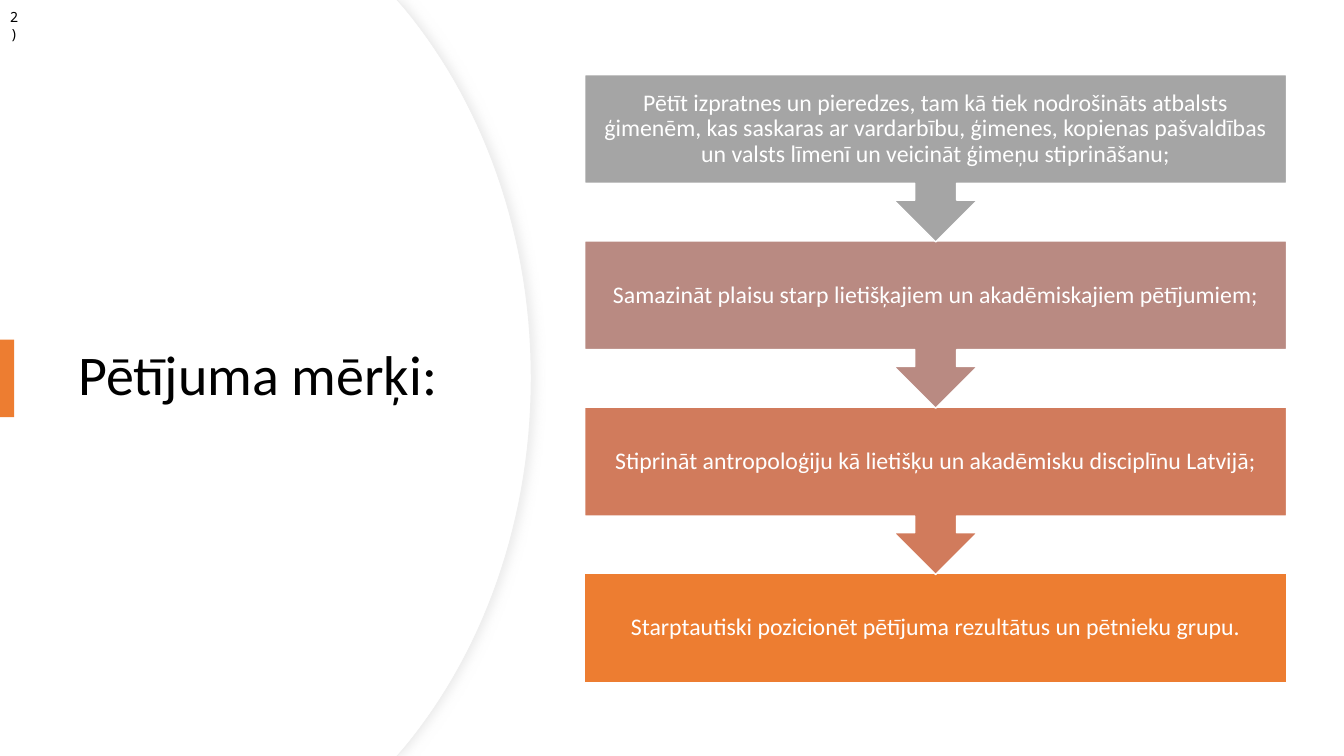
from lxml import etree
from pptx import Presentation
from pptx import util as u
from pptx.dml.color import RGBColor
from pptx.enum import shapes, text
from pptx.oxml.ns import qn

GOALS = [
    ("A5A5A5", "Pētīt izpratnes un pieredzes, tam kā tiek nodrošināts atbalsts "
               "ģimenēm, kas saskaras ar vardarbību, ģimenes, kopienas pašvaldības "
               "un valsts līmenī un veicināt ģimeņu stiprināšanu;"),
    ("B98A82", "Samazināt plaisu starp lietišķajiem un akadēmiskajiem pētījumiem;"),
    ("D17B5C", "Stiprināt antropoloģiju kā lietišķu un akadēmisku disciplīnu Latvijā;"),
    ("ED7D31", "Starptautiski pozicionēt pētījuma rezultātus un pētnieku grupu."),
]


def rgb(code):
    return RGBColor.from_string(code)


def inches(*nums):
    return [u.Inches(n) for n in nums]


def paint(shape, fill, line=None, width=1):
    shape.shadow.inherit = False
    shape.fill.solid()
    shape.fill.fore_color.rgb = rgb(fill)
    if line:
        shape.line.color.rgb = rgb(line)
        shape.line.width = u.Pt(width)
    else:
        shape.line.fill.background()


def write(slide, box, words, size, color, font="Calibri", inset=None, **para):
    label = slide.shapes.add_textbox(*inches(*box))
    frame = label.text_frame
    frame.word_wrap = True
    frame.vertical_anchor = text.MSO_ANCHOR.MIDDLE
    if inset:
        for side in ("left", "right", "top", "bottom"):
            setattr(frame, "margin_" + side, u.Inches(inset))
    line = frame.paragraphs[0]
    for name, value in para.items():
        setattr(line, name, value)
    run = line.add_run()
    run.text = words
    for name, value in {"name": font, "size": u.Pt(size)}.items():
        setattr(run.font, name, value)
    run.font.color.rgb = rgb(color)


def bezier(a, b, c, d, steps=30):
    """Points along a cubic curve, without its start."""
    for i in range(1, steps + 1):
        t = i / steps
        s = 1 - t
        yield tuple(s**3 * p + 3 * s * s * t * q + 3 * s * t * t * r + t**3 * e
                    for p, q, r, e in zip(a, b, c, d))


def panel(slide, box):
    """White area with a bulging right edge."""
    x, y, w, h = box
    mid = h / 2
    top = [(w - 1.33, 0), (w - 1.26, 0.08)]
    top += bezier(top[-1], (w - 0.48, 1.02), (w, 2.32), (w, mid))
    low = [(px, h - py) for px, py in reversed(top[:-1])]
    path = [inches(x + px, y + py) for px, py in top + low + [(0, h)]]
    pen = slide.shapes.build_freeform(*inches(x, y))
    pen.add_line_segments(path, close=True)
    return pen.convert_to_shape()


def cast(shape, color, alpha, blur, dist):
    """Soft shadow to the right."""
    effects = shape._element.spPr.find(qn("a:effectLst"))
    outer = etree.SubElement(effects, qn("a:outerShdw"), blurRad=str(u.Pt(blur)),
                             dist=str(u.Pt(dist)), dir="0", rotWithShape="0")
    tint = etree.SubElement(outer, qn("a:srgbClr"), val=color)
    etree.SubElement(tint, qn("a:alpha"), val=str(alpha * 1000))


def heading(slide, box):
    x, y, w, h = box
    edge = panel(slide, (x, y, w, h))
    paint(edge, "FFFFFF", "EFEFEF", 0.75)
    cast(edge, "D9D9D9", 50, 7, 3)
    paint(panel(slide, (x, y, w - 0.01, h)), "FFFFFF")
    write(slide, (x + 0.68, y + 1.27, 3.94, 4.95), "Pētījuma mērķi:", 40, "000000",
          line_spacing=0.9)
    mark = slide.shapes.add_shape(shapes.MSO_SHAPE.RECTANGLE,
                                  *inches(x, y + 3.37, 0.14, 0.77))
    paint(mark, "ED7D31")
    write(slide, (x, y + 0.12, 0.33, 0.27), "2)", 10, "000000", "Noto Sans Mono",
          space_after=u.Pt(6))


def steps(slide, box):
    """Stack of goals, each pointing down to the next."""
    x, y, w, h = box
    bar, drop = 1.08, 1.66
    pitch = (h - bar) / (len(GOALS) - 1)
    for i, (color, words) in reversed(list(enumerate(GOALS))):
        top = y + i * pitch
        last = i == len(GOALS) - 1
        kind = (shapes.MSO_SHAPE.RECTANGLE if last
                else shapes.MSO_SHAPE.UP_ARROW_CALLOUT)
        block = slide.shapes.add_shape(kind, *inches(x, top, w, bar if last else drop))
        block.rotation = 0 if last else 180
        paint(block, color, "FFFFFF")
        write(slide, (x, top, w, bar), words, 17, "FFFFFF", inset=0.13,
              alignment=text.PP_ALIGN.CENTER, line_spacing=0.9)


def main():
    deck = Presentation()
    deck.slide_width, deck.slide_height = inches(13.33, 7.5)
    slide = deck.slides.add_slide(deck.slide_layouts[6])
    heading(slide, (0, 0, 5.27, 7.5))
    steps(slide, (5.8, 0.74, 6.96, 6.03))
    deck.save("out.pptx")


if __name__ == "__main__":
    main()
